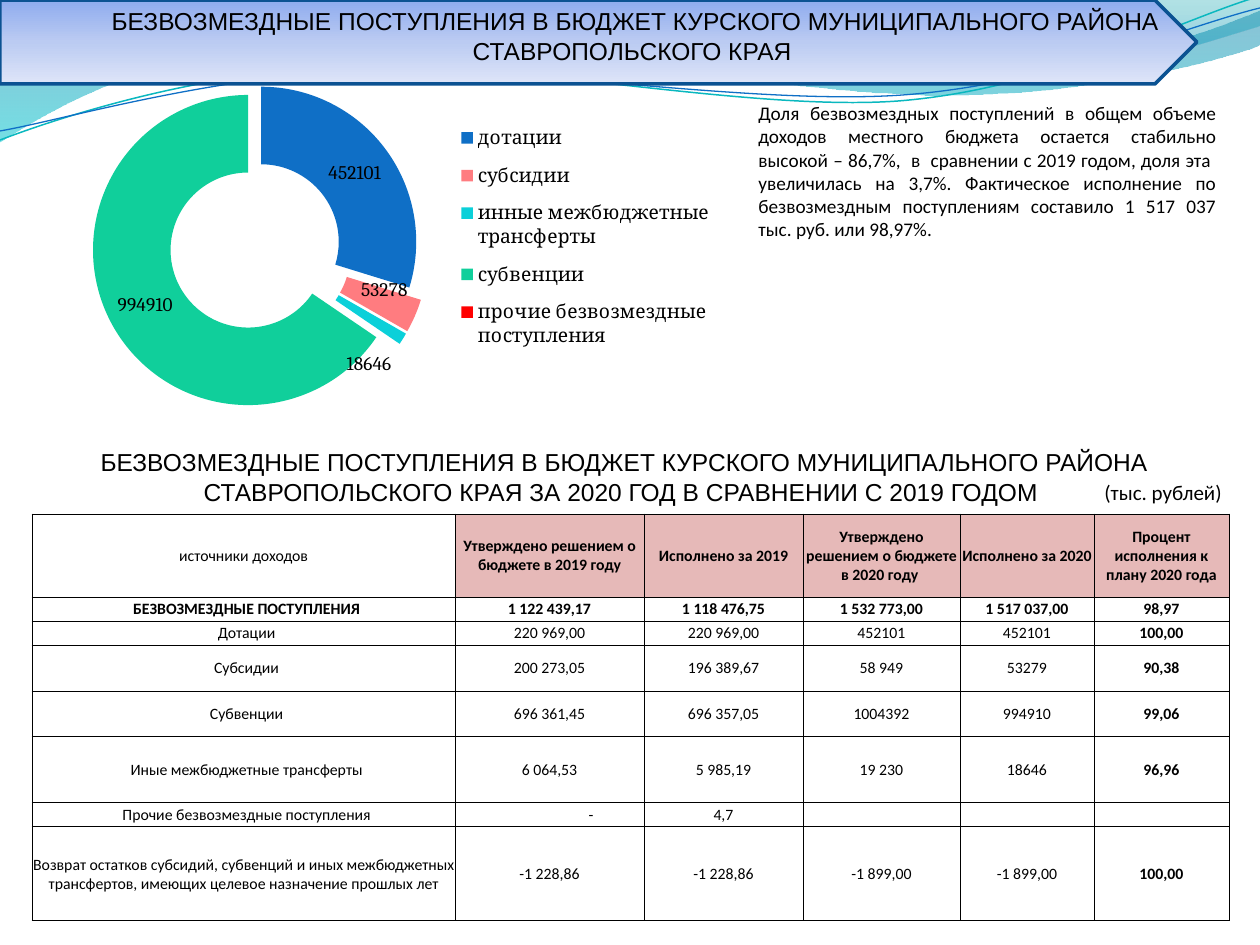
from lxml import etree
from pptx import Presentation
from pptx.chart.data import CategoryChartData
from pptx.dml.color import RGBColor
from pptx.enum import chart as ch, shapes, text
from pptx.oxml import parse_xml
from pptx.oxml.ns import nsdecls, qn
from pptx.util import Pt

PX = 914400 / 126
COLORS = {"ink": "000000", "head": "E6B9B8", "banner_line": "0B5292",
          "teal": "0AB8BF", "blue": "0F6FC6"}

TITLE = "БЕЗВОЗМЕЗДНЫЕ ПОСТУПЛЕНИЯ В БЮДЖЕТ КУРСКОГО МУНИЦИПАЛЬНОГО РАЙОНА СТАВРОПОЛЬСКОГО КРАЯ "
SUBTITLE = TITLE + "ЗА 2020 ГОД В СРАВНЕНИИ С 2019 ГОДОМ "
UNIT = "(тыс. рублей)"
COMMENT = ("Доля безвозмездных поступлений в общем объеме доходов местного бюджета остается "
           "стабильно высокой – 86,7%,  в  сравнении с 2019 годом, доля эта  увеличилась на 3,7%. "
           "Фактическое исполнение по безвозмездным поступлениям составило 1 517 037 тыс. руб. "
           "или 98,97%.")

# Waves: a start point, then lines (2 numbers) and Bezier curves (6 numbers), in px
WAVE_FILLS = [
    ([(0, 0), (554, -1), (600, 21, 837, 79, 955, 79), (1075, 79, 1207, 33, 1260, 11),
      (1261, 45), (1239, 55, 1096, 96, 940, 95), (784, 95, 481, 35, 324, 43),
      (163, 45, 58, 105, -1, 142)],
     [(0, "0074A1", 45), (100, "00C6CF", 55)]),
    ([(604, -1), (641, 14, 859, 78, 969, 82), (1079, 87, 1211, 40, 1260, 26), (1260, 0)],
     [(0, "00A1A9", 30), (80, "008BBF", 45)]),
]
WAVE_LINES = [
    ([(0, 140), (60, 117, 199, 72, 349, 66), (498, 59, 747, 112, 898, 101),
      (1050, 89, 1182, 19, 1257, -3)], "teal", 0.85),
    ([(0, 131), (59, 121, 207, 77, 357, 71), (508, 64, 752, 106, 903, 95),
      (1053, 84, 1186, 26, 1260, 8)], "blue", 0.75),
]
BANNER_STOPS = [(0, "8EABEE", 100), (50, "BBCBF2", 100), (100, "DEE5F8", 100)]

SLICES = [("дотации", 452101, "0F6FC6"), ("субсидии", 53278, "FF7C80"),
          ("инные межбюджетные трансферты", 18646, "0BD0D9"),
          ("субвенции", 994910, "10CF9B"),
          ("прочие безвозмездные поступления", 0, "FF0000")]
CHART_BOX = (21, 42, 703, 399)
PLOT_BOX = (22, 30, 424, 349)        # px inside the chart
LEGEND_BOX = (431, 70, 267, 250)
LABEL_SHIFTS = {1: (5, -11), 2: (-1, 46)}
SERIES_EXPLOSION, POINT_EXPLOSIONS = 25, {0: 10, 3: 10}

COL_WIDTHS = [423, 189, 159, 157, 134, 135]
ROW_HEIGHTS = [83, 24, 24, 46, 45, 67, 24, 94]
ROWS = [
    ("источники доходов", "Утверждено решением о бюджете в 2019 году", "Исполнено за 2019",
     "Утверждено решением о бюджете в 2020 году ", "Исполнено за 2020 ",
     "Процент исполнения к плану 2020 года"),
    ("БЕЗВОЗМЕЗДНЫЕ ПОСТУПЛЕНИЯ", "1 122 439,17", "1 118 476,75", "1 532 773,00",
     "1 517 037,00", "98,97"),
    ("Дотации", "220 969,00", "220 969,00", "452101", "452101", "100,00"),
    ("Субсидии", "200 273,05", "196 389,67", "58 949", "53279", "90,38"),
    ("Субвенции", "696 361,45", "696 357,05", "1004392", "994910", "99,06"),
    ("Иные межбюджетные трансферты", "6 064,53", "5 985,19", "19 230", "18646", "96,96"),
    ("Прочие безвозмездные поступления", "-", "4,7", "", "", ""),
    ("Возврат остатков субсидий, субвенций и иных межбюджетных трансфертов, "
     "имеющих целевое назначение прошлых лет",
     "-1 228,86", "-1 228,86", "-1 899,00", "-1 899,00", "100,00"),
]


def px(*values):
    return [round(v * PX) for v in values]


def rgb(name):
    return RGBColor.from_string(COLORS.get(name, name))


def set_font(font, name, size, bold=False):
    font.name, font.size, font.bold = name, Pt(size), bold
    font.color.rgb = rgb("ink")


def set_gradient(shape, stops):
    """Fill from top to bottom with (position %, colour, opacity %) stops."""
    shape.fill.gradient()
    shape.fill.gradient_angle = 270
    stop_list = shape.element.spPr.find(qn("a:gradFill")).find(qn("a:gsLst"))
    for old in list(stop_list):
        stop_list.remove(old)
    for pos, color, alpha in stops:
        gs = etree.SubElement(stop_list, qn("a:gs"), pos=str(pos * 1000))
        clr = etree.SubElement(gs, qn("a:srgbClr"), val=color)
        etree.SubElement(clr, qn("a:alpha"), val=str(alpha * 1000))


def add_wave(s, segments, closed):
    """Build the outline through all points, then join each curve's three into a Bezier."""
    start, *rest = segments
    points = [px(*seg[i:i + 2]) for seg in rest for i in range(0, len(seg), 2)]
    builder = s.shapes.build_freeform(*px(*start), scale=1.0)
    builder.add_line_segments(points, close=closed)
    wave = builder.convert_to_shape()
    wave.shadow.inherit = False
    steps = iter(list(wave.element.iter(qn("a:lnTo"))))
    for seg in rest:
        group = [next(steps) for _ in range(len(seg) // 2)]
        if len(group) == 3:
            curve = etree.Element(qn("a:cubicBezTo"))
            group[0].addprevious(curve)
            for step in group:
                curve.append(step[0])
                step.getparent().remove(step)
    return wave


def fill_text(sp, content, name, size, align, anchor=text.MSO_ANCHOR.TOP, wrap=True):
    tf = sp.text_frame
    tf.text = content
    tf.word_wrap, tf.vertical_anchor, tf.auto_size = wrap, anchor, text.MSO_AUTO_SIZE.NONE
    p = tf.paragraphs[0]
    p.alignment = align
    set_font(p.runs[0].font, name, size)


def manual_layout(*box, inner=False):
    """Layout from px inside the chart: a full box, or only a shift of x and y."""
    parts = '<c:layoutTarget val="inner"/>' if inner else ""
    if len(box) == 4:
        parts += '<c:xMode val="edge"/><c:yMode val="edge"/>'
    for tag, val, whole in zip("xywh", box, CHART_BOX[2:] * 2):
        parts += f'<c:{tag} val="{val / whole:.4f}"/>'
    return parse_xml(f'<c:layout {nsdecls("c")}><c:manualLayout>{parts}</c:manualLayout></c:layout>')


def explosion(percent):
    return parse_xml(f'<c:explosion {nsdecls("c")} val="{percent}"/>')


def add_doughnut(s):
    data = CategoryChartData()
    data.categories = [name for name, _, _ in SLICES]
    data.add_series("Series 1", [value for _, value, _ in SLICES])
    chart = s.shapes.add_chart(ch.XL_CHART_TYPE.DOUGHNUT, *px(*CHART_BOX), data).chart
    chart.has_title = False
    set_font(chart.font, "Cambria", 9)
    chart.has_legend = True
    legend = chart.legend
    legend.position, legend.include_in_layout = ch.XL_LEGEND_POSITION.RIGHT, False
    set_font(legend.font, "Cambria", 11)
    area = chart.element.find(".//" + qn("c:plotArea"))
    for parent in (legend._element, area):
        for old in parent.findall(qn("c:layout")):
            parent.remove(old)
    legend._element.find(qn("c:legendPos")).addnext(manual_layout(*LEGEND_BOX))
    area.insert(0, manual_layout(*PLOT_BOX, inner=True))

    series = chart.plots[0].series[0]
    series._element.find(qn("c:tx")).addnext(explosion(SERIES_EXPLOSION))
    for i, (_, _, color) in enumerate(SLICES):
        fill = series.points[i].format.fill
        fill.solid()
        fill.fore_color.rgb = rgb(color)
    for i, percent in POINT_EXPLOSIONS.items():
        point = series._element.xpath(f"c:dPt[c:idx/@val={i}]")[0]
        point.find(qn("c:spPr")).addprevious(explosion(percent))
    labels = series.data_labels
    labels.show_value = True
    labels.number_format, labels.number_format_is_linked = "0;;;", False
    set_font(labels.font, "Cambria", 11)
    for i, shift in LABEL_SHIFTS.items():
        set_font(series.points[i].data_label.font, "Cambria", 11)
        label = series._element.xpath(f"c:dLbls/c:dLbl[c:idx/@val={i}]")[0]
        label.insert(1, manual_layout(*shift))


def add_borders(cell):
    for i, side in enumerate(("lnL", "lnR", "lnT", "lnB")):
        cell._tc.get_or_add_tcPr().insert(i, parse_xml(
            f'<a:{side} {nsdecls("a")} w="6350"><a:solidFill>'
            f'<a:srgbClr val="{COLORS["ink"]}"/></a:solidFill></a:{side}>'))


def add_income_table(s):
    box = px(32, 514, sum(COL_WIDTHS), sum(ROW_HEIGHTS))
    table = s.shapes.add_table(len(ROWS), len(COL_WIDTHS), *box).table
    table.first_row = table.horz_banding = False
    for col, width in zip(table.columns, COL_WIDTHS):
        col.width = px(width)[0]
    for r, (row, height) in enumerate(zip(ROWS, ROW_HEIGHTS)):
        table.rows[r].height = px(height)[0]
        for c, content in enumerate(row):
            cell = table.cell(r, c)
            indent = 84 if content == "-" else 7 if c == 0 and 0 < r < 7 else 1
            cell.vertical_anchor = text.MSO_ANCHOR.MIDDLE
            cell.margin_left, cell.margin_right, cell.margin_top, cell.margin_bottom = px(
                indent, 1, 1, 0)
            cell.text = content
            p = cell.text_frame.paragraphs[0]
            p.alignment = text.PP_ALIGN.CENTER
            bold = r == 1 or c == 5 or (r == 0 and c > 0)
            for run in p.runs:
                set_font(run.font, "Calibri", 9, bold)
            if not content:
                etree.SubElement(p._p, qn("a:endParaRPr"), sz="900")
            if r == 0 and c > 0:
                cell.fill.solid()
                cell.fill.fore_color.rgb = rgb("head")
            else:
                cell.fill.background()
            add_borders(cell)


def main():
    prs = Presentation()
    prs.slide_width, prs.slide_height = px(1260, 945)
    s = prs.slides.add_slide(prs.slide_layouts[5])
    for segments, stops in WAVE_FILLS:
        wave = add_wave(s, segments, True)
        set_gradient(wave, stops)
        wave.line.fill.background()
    for segments, color, width in WAVE_LINES:
        wave = add_wave(s, segments, False)
        wave.fill.background()
        wave.line.color.rgb, wave.line.width = rgb(color), Pt(width)

    banner = s.shapes.add_shape(shapes.MSO_SHAPE.PENTAGON, *px(0, 0, 1197, 84))
    banner.shadow.inherit = False
    set_gradient(banner, BANNER_STOPS)
    banner.line.color.rgb, banner.line.width = rgb("banner_line"), Pt(2)

    title = s.shapes.title
    title.left, title.top, title.width, title.height = px(32, 0, 1207, 102)
    s.shapes.element.append(title.element)  # bring in front of the banner
    align = text.PP_ALIGN
    fill_text(title, TITLE, "Arial", 14, align.CENTER)

    add_doughnut(s)
    fill_text(s.shapes.add_textbox(*px(746, 95, 483, 152)), COMMENT, "Calibri", 11,
              align.JUSTIFY, text.MSO_ANCHOR.MIDDLE)
    fill_text(s.shapes.add_textbox(*px(21, 441, 1207, 72)), SUBTITLE, "Arial", 14, align.CENTER)
    fill_text(s.shapes.add_textbox(*px(1092, 473, 144, 38)), UNIT, "Calibri", 12,
              align.LEFT, wrap=False)
    add_income_table(s)
    prs.save("out.pptx")


if __name__ == "__main__":
    main()
